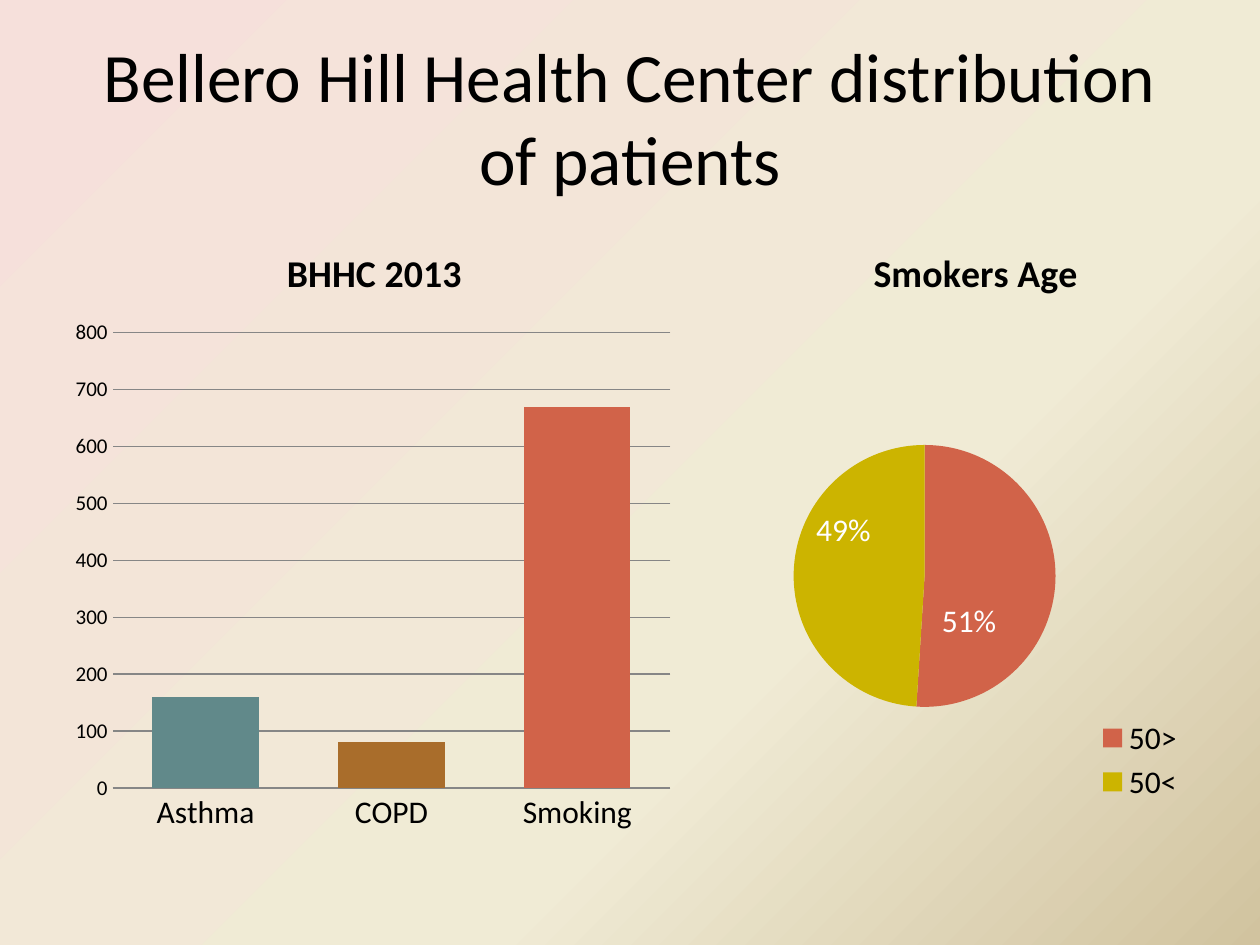
from dataclasses import dataclass

from lxml.etree import SubElement
from pptx import Presentation
from pptx.chart.chart import Chart
from pptx.chart.data import CategoryChartData
from pptx.dml.color import RGBColor
from pptx.enum.chart import XL_CHART_TYPE as ChartType
from pptx.enum.chart import XL_LABEL_POSITION as LabelPosition
from pptx.enum.chart import XL_LEGEND_POSITION as LegendPosition
from pptx.enum.chart import XL_TICK_MARK as TickMark
from pptx.enum.text import MSO_ANCHOR, PP_ALIGN
from pptx.oxml import parse_xml
from pptx.oxml.ns import nsdecls, qn
from pptx.util import Inches, Pt


@dataclass(frozen=True)
class Theme:
    font: str = "Calibri"
    text: str = "000000"
    label: str = "FFFFFF"
    grid: str = "868686"
    title_size: float = 39.6
    chart_title_size: float = 21.6
    chart_size: float = 18
    axis_size: float = 12
    background: tuple = ((0, "F6E0DB"), (65, "F0EBD5"), (100, "D1C39F"))


@dataclass(frozen=True)
class ChartSpec:
    kind: ChartType
    left: float
    width: float
    title: str
    title_place: tuple
    plot_place: tuple
    series: str
    points: tuple  # (category, value, colour)


THEME = Theme()
CHART_TOP, CHART_HEIGHT = 1.75, 4.95
PATIENTS = ChartSpec(
    ChartType.COLUMN_CLUSTERED, 0.5, 4.92, "BHHC 2013", (0.35, 0.03),
    (0.08, 0.18, 0.9, 0.73), "Series 1",
    (("Asthma", 160, "61898A"), ("COPD", 80, "A96D2B"), ("Smoking", 670, "D16349")),
)
SMOKERS = ChartSpec(
    ChartType.PIE, 5.67, 4.17, "Smokers Age", (0.29, 0.03),
    (0.15, 0.36, 0.5, 0.42), "Smokers Age",
    (("50>", 51, "D16349"), ("50<", 49, "CCB400")),
)
LABEL_OFFSETS = ((-0.04, 0.07), (-0.03, -0.07))


def rgb(colour: str) -> RGBColor:
    return RGBColor.from_string(colour)


def format_font(font, size: float, colour: str = THEME.text, bold: bool = False) -> None:
    font.name = THEME.font
    font.size = Pt(size)
    font.bold = bold
    font.color.rgb = rgb(colour)


def make_layout(place: tuple, edge: bool = True, inner: bool = False):
    """Manual chart layout, in fractions of the chart area."""
    layout = parse_xml(f"<c:layout {nsdecls('c')}><c:manualLayout/></c:layout>")
    settings = [("layoutTarget", "inner")] if inner else []
    if edge:
        settings += [("xMode", "edge"), ("yMode", "edge")]
    settings += zip("xywh", place)
    for name, value in settings:
        SubElement(layout[0], qn(f"c:{name}")).set("val", str(value))
    return layout


def paint_background(slide) -> None:
    fill = slide.background.fill
    fill.gradient()
    fill.gradient_angle = 315
    stops = slide.element.xpath(".//p:bg//a:gsLst")[0]
    for stop in list(stops):
        stops.remove(stop)
    for position, colour in THEME.background:
        stop = SubElement(stops, qn("a:gs"), pos=str(position * 1000))
        SubElement(stop, qn("a:srgbClr"), val=colour)


def add_title(slide, text: str) -> None:
    title = slide.shapes.title
    title.left, title.top = Inches(0.5), Inches(0.3)
    title.width, title.height = Inches(9), Inches(1.25)
    title.text_frame.text = text
    title.text_frame.vertical_anchor = MSO_ANCHOR.MIDDLE
    paragraph = title.text_frame.paragraphs[0]
    paragraph.alignment = PP_ALIGN.CENTER
    format_font(paragraph.runs[0].font, THEME.title_size)


def add_chart(slide, spec: ChartSpec) -> Chart:
    data = CategoryChartData()
    data.categories = [category for category, _, _ in spec.points]
    data.add_series(spec.series, [value for _, value, _ in spec.points])
    chart = slide.shapes.add_chart(
        spec.kind, Inches(spec.left), Inches(CHART_TOP),
        Inches(spec.width), Inches(CHART_HEIGHT), data,
    ).chart
    format_font(chart.font, THEME.chart_size)
    chart.has_legend = False

    # Chart title
    chart.has_title = True
    frame = chart.chart_title.text_frame
    frame.text = spec.title
    format_font(frame.paragraphs[0].runs[0].font, THEME.chart_title_size, bold=True)
    title = chart.chart_title._element
    for old in title.findall(qn("c:layout")):
        title.remove(old)
    title.find(qn("c:tx")).addnext(make_layout(spec.title_place))

    # Plot area and point colours
    plot_area = chart._chartSpace.chart.plotArea
    for old in plot_area.findall(qn("c:layout")):
        plot_area.remove(old)
    plot_area.insert(0, make_layout(spec.plot_place, inner=True))
    for index, (_, _, colour) in enumerate(spec.points):
        fill = chart.plots[0].series[0].points[index].format.fill
        fill.solid()
        fill.fore_color.rgb = rgb(colour)
    return chart


def style_columns(chart: Chart) -> None:
    chart.plots[0].gap_width = 75
    chart.plots[0].vary_by_categories = False
    value_axis, category_axis = chart.value_axis, chart.category_axis
    for axis in (value_axis, category_axis):
        axis.major_tick_mark = axis.minor_tick_mark = TickMark.NONE
    value_axis.minimum_scale, value_axis.maximum_scale = 0, 800
    value_axis.major_unit = 100
    value_axis.has_major_gridlines = True
    format_font(value_axis.tick_labels.font, THEME.axis_size)
    value_axis.format.line.fill.background()
    for line in (value_axis.major_gridlines.format.line, category_axis.format.line):
        line.color.rgb = rgb(THEME.grid)
        line.width = Pt(0.75)


def style_pie(chart: Chart) -> None:
    plot = chart.plots[0]
    plot.vary_by_categories = True
    labels = plot.series[0].data_labels
    labels.show_percentage = True
    labels.show_value = False
    labels.number_format = "0%"
    labels.number_format_is_linked = False
    labels.position = LabelPosition.CENTER
    format_font(labels.font, THEME.chart_size, THEME.label)

    # Each label is shifted from the middle of its slice
    for index, offset in enumerate(LABEL_OFFSETS):
        point_label = plot.series[0].points[index].data_label
        format_font(point_label.font, THEME.chart_size, THEME.label)
        point_label.position = LabelPosition.CENTER
        element = labels._element.findall(qn("c:dLbl"))[index]
        element.find(qn("c:idx")).addnext(make_layout(offset, edge=False))
        for flag, shown in (("showVal", "0"), ("showPercent", "1")):
            element.find(qn(f"c:{flag}")).set("val", shown)

    chart.has_legend = True
    legend = chart.legend
    legend.position = LegendPosition.RIGHT
    legend.include_in_layout = False
    format_font(legend.font, THEME.chart_size)
    for old in legend._element.findall(qn("c:layout")):
        legend._element.remove(old)
    legend._element.find(qn("c:legendPos")).addnext(
        make_layout((0.73, 0.79, 0.16, 0.15)))


def main() -> None:
    presentation = Presentation()
    presentation.slide_width, presentation.slide_height = Inches(10), Inches(7.5)
    slide = presentation.slides.add_slide(presentation.slide_layouts[5])
    paint_background(slide)
    add_title(slide, "Bellero Hill Health Center distribution of patients")
    style_columns(add_chart(slide, PATIENTS))
    style_pie(add_chart(slide, SMOKERS))
    presentation.save("out.pptx")


if __name__ == "__main__":
    main()
